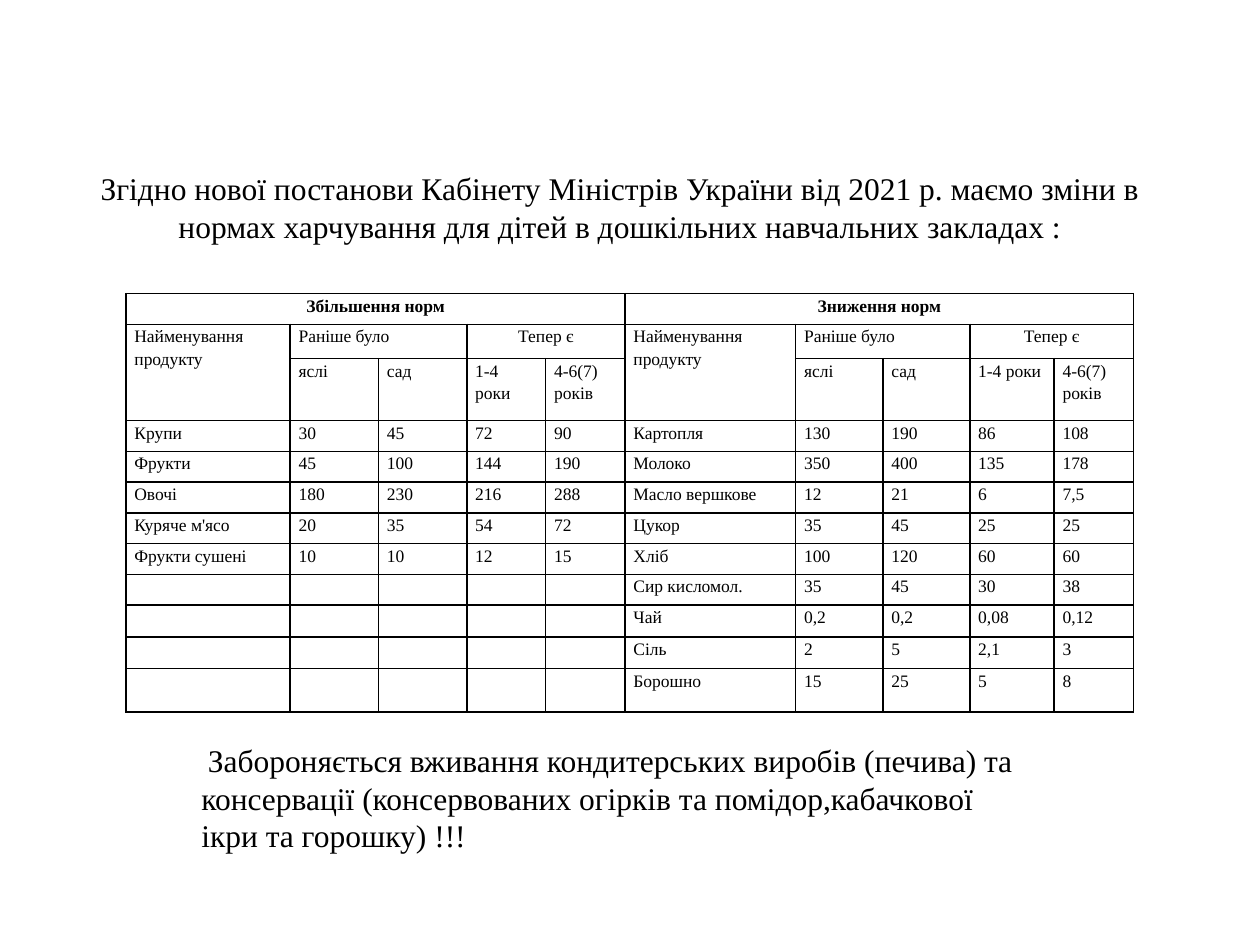
import dataclasses
import pptx
import pptx.dml.color
import pptx.enum.text
import pptx.oxml
import pptx.oxml.ns
import pptx.util

Cm = pptx.util.Cm
Pt = pptx.util.Pt
Align = pptx.enum.text.PP_ALIGN
Anchor = pptx.enum.text.MSO_ANCHOR


@dataclasses.dataclass(frozen=True)
class Theme:
    """Colours, font and type sizes of the slide."""
    ink: str = "000000"
    font: str = "Times New Roman"
    large: int = 18
    small: int = 10
    rule: int = 1


THEME = Theme()

TITLE = ("Згідно нової постанови Кабінету Міністрів України від 2021 р. маємо зміни в "
         "нормах харчування для дітей в дошкільних навчальних закладах :")
NOTE = ("Забороняється вживання кондитерських виробів (печива) та консервації "
        "(консервованих огірків та помідор,кабачкової ікри та горошку) !!!")
AGES = ["яслі", "сад", "1-4 роки", "4-6(7) років"]
RAISED = [
    ["Крупи", "30", "45", "72", "90"],
    ["Фрукти", "45", "100", "144", "190"],
    ["Овочі", "180", "230", "216", "288"],
    ["Куряче м'ясо", "20", "35", "54", "72"],
    ["Фрукти сушені", "10", "10", "12", "15"],
]
CUT = [
    ["Картопля", "130", "190", "86", "108"],
    ["Молоко", "350", "400", "135", "178"],
    ["Масло вершкове", "12", "21", "6", "7,5"],
    ["Цукор", "35", "45", "25", "25"],
    ["Хліб", "100", "120", "60", "60"],
    ["Сир кисломол.", "35", "45", "30", "38"],
    ["Чай", "0,2", "0,2", "0,08", "0,12"],
    ["Сіль", "2", "5", "2,1", "3"],
    ["Борошно", "15", "25", "5", "8"],
]
COLS = [3.31, 1.78, 1.78, 1.59, 1.6, 3.44, 1.76, 1.75, 1.7, 1.6]
ROWS = [0.62, 0.69, 1.25] + [0.62] * 6 + [0.64, 0.64, 0.87]


def write(par, text, size, bold=False):
    """Add one styled run to a paragraph."""
    run = par.add_run()
    run.text = text
    run.font.name = THEME.font
    run.font.size = Pt(size)
    run.font.bold = bold
    run.font.color.rgb = pptx.dml.color.RGBColor.from_string(THEME.ink)


def add_text(slide, box, text, align, anchor, indent=0):
    """Place a wrapped paragraph of large type in a box."""
    frame = slide.shapes.add_textbox(*map(Cm, box)).text_frame
    frame.word_wrap = True
    frame.vertical_anchor = anchor
    par = frame.paragraphs[0]
    par.alignment = align
    if indent:
        par._p.get_or_add_pPr().set("indent", str(Cm(indent)))
    write(par, text, THEME.large)


def rule_cell(cell):
    """Clear the fill of a cell and rule its four sides."""
    cell.fill.background()
    props = cell._tc.get_or_add_tcPr()
    for spot, side in enumerate("LRTB"):
        props.insert(spot, pptx.oxml.parse_xml(
            f'<a:ln{side} {pptx.oxml.ns.nsdecls("a")} w="{Pt(THEME.rule)}"><a:solidFill>'
            f'<a:srgbClr val="{THEME.ink}"/></a:solidFill></a:ln{side}>'))


def fill_cell(cell, text="", align=Align.LEFT, bold=False):
    """Write small type into a table cell."""
    par = cell.text_frame.paragraphs[0]
    par.alignment = align
    par.line_spacing = 1.15
    write(par, text, THEME.small, bold)


def fill_half(grid, left, name, foods):
    """Fill one five-column half of the table with its heads and foods."""
    heads = [
        (0, 0, 0, 4, name, Align.CENTER),
        (1, 0, 2, 0, "Найменування продукту", Align.LEFT),
        (1, 1, 1, 2, "Раніше було", Align.LEFT),
        (1, 3, 1, 4, "Тепер є", Align.CENTER),
    ]
    for top, start, low, end, text, align in heads:
        cell = grid.cell(top, left + start)
        cell.merge(grid.cell(low, left + end))
        fill_cell(cell, text, align, bold=top == 0)
    for col, age in enumerate(AGES, left + 1):
        fill_cell(grid.cell(2, col), age)
    for row, food in enumerate(foods, 3):
        for col, text in enumerate(food, left):
            fill_cell(grid.cell(row, col), text)


def add_norms(slide, box):
    """Place the ruled table of raised and lowered norms in a box."""
    grid = slide.shapes.add_table(len(ROWS), len(COLS), *map(Cm, box)).table
    grid.first_row = grid.horz_banding = False
    for col, width in zip(grid.columns, COLS):
        col.width = Cm(width)
    for row, height in zip(grid.rows, ROWS):
        row.height = Cm(height)
    for cell in grid.iter_cells():
        cell.margin_left = cell.margin_right = Cm(0.17)
        cell.margin_top = cell.margin_bottom = 0
        tail = cell.text_frame.paragraphs[0]._p.get_or_add_endParaRPr()
        tail.set("sz", str(THEME.small * 100))
        rule_cell(cell)
    fill_half(grid, 0, "Збільшення норм", RAISED)
    fill_half(grid, 5, "Зниження норм", CUT)


def main():
    """Build the slide and save it."""
    deck = pptx.Presentation()
    deck.slide_width, deck.slide_height = Cm(25.4), Cm(19.05)
    slide = deck.slides.add_slide(deck.slide_layouts[6])
    add_norms(slide, (2.54, 5.92, 20.32, 8.46))
    add_text(slide, (1.07, 0, 22.86, 8.33), TITLE, Align.CENTER, Anchor.MIDDLE)
    add_text(slide, (3.81, 14.81, 16.94, 2.57), NOTE, Align.LEFT, Anchor.TOP, 0.13)
    deck.save("out.pptx")


if __name__ == "__main__":
    main()
